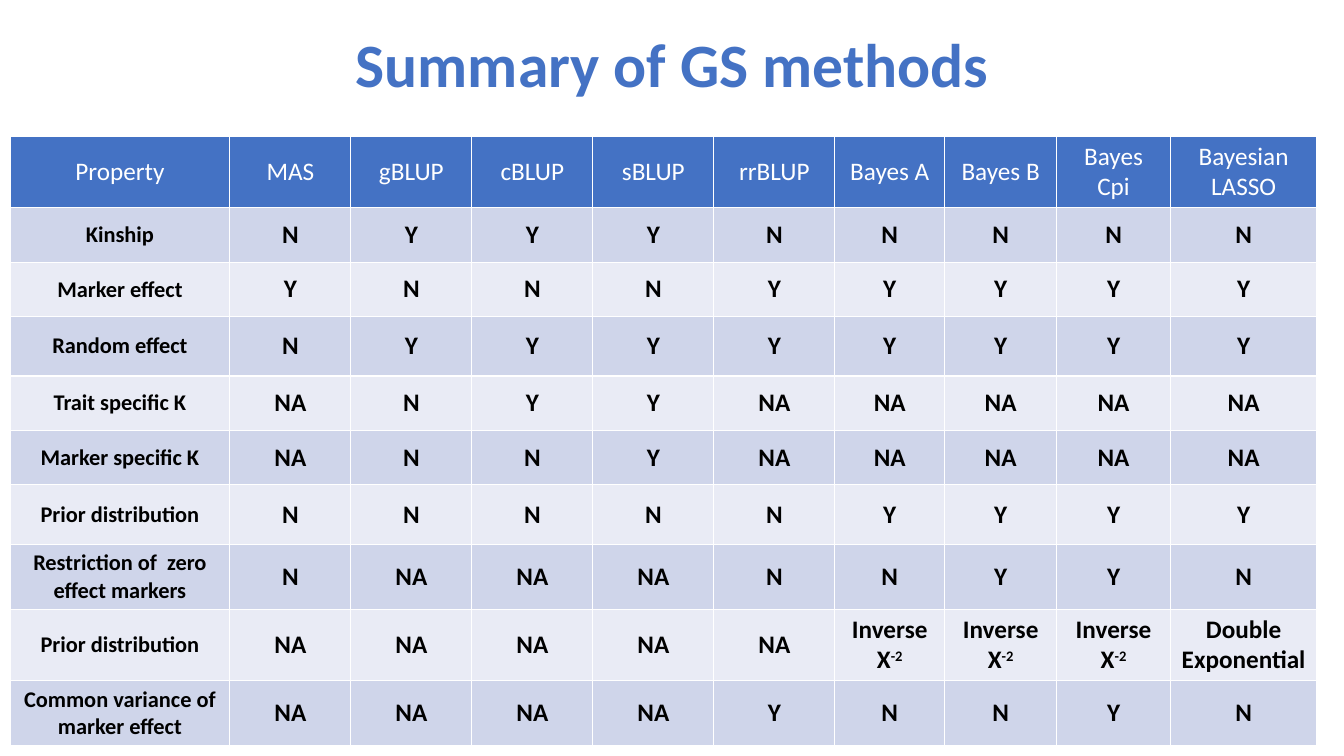
from pptx import Presentation
from pptx.dml.color import RGBColor as RGB
from pptx.enum.text import MSO_ANCHOR as Anchor, PP_ALIGN as Align
from pptx.util import Pt

PX = 9144  # 100 px to the inch
FONT = "Calibri"
HUES = {"blue": "4472C4", "white": "FFFFFF", "black": "000000",
        "dark": "CFD5EA", "light": "E9EBF5"}

WIDTHS = [218] + [120] * 5 + [109, 111, 113, 145]
HEIGHTS = [54, 54, 54, 59, 54, 54, 59, 54, 65, 54]
HEADS = ["Property", "MAS", "gBLUP", "cBLUP", "sBLUP", "rrBLUP",
         "Bayes A", "Bayes B", "Bayes Cpi", "Bayesian LASSO"]
INVERSE = "Inverse X^-2"  # the part after ^ is raised
TRAITS = [
    ("Kinship", "N Y Y Y N N N N N".split()),
    ("Marker effect", "Y N N N Y Y Y Y Y".split()),
    ("Random effect", "N Y Y Y Y Y Y Y Y".split()),
    ("Trait specific K", "NA N Y Y NA NA NA NA NA".split()),
    ("Marker specific K", "NA N N Y NA NA NA NA NA".split()),
    ("Prior distribution", "N N N N N Y Y Y Y".split()),
    ("Restriction of  zero effect markers", "N NA NA NA N N Y Y N".split()),
    ("Prior distribution",
     ["NA"] * 5 + [INVERSE] * 3 + ["Double Exponential"]),
    ("Common variance of marker effect", "NA NA NA NA Y N N Y N".split()),
]


def style(run, size, hue, bold):
    font = run.font
    font.name, font.size, font.bold = FONT, Pt(size), bold
    font.color.rgb = RGB.from_string(HUES[hue])


def add_title(slide, text, left, top, width, height):
    title = slide.shapes.title
    title.left, title.top = left * PX, top * PX
    title.width, title.height = width * PX, height * PX
    frame = title.text_frame
    frame.text = text
    frame.vertical_anchor = Anchor.MIDDLE
    para = frame.paragraphs[0]
    para.alignment = Align.CENTER
    para.line_spacing = 0.9
    style(para.runs[0], 44, "blue", True)


def fill_cell(cell, text, size, hue, bold, back):
    cell.fill.solid()
    cell.fill.fore_color.rgb = RGB.from_string(HUES[back])
    cell.vertical_anchor = Anchor.MIDDLE
    para = cell.text_frame.paragraphs[0]
    para.alignment = Align.CENTER
    base, _, power = text.partition("^")
    para.text = base
    if power:
        run = para.add_run()
        run.text = power
        run.font._element.set("baseline", "30000")
    for run in para.runs:
        style(run, size, hue, bold)


def add_grid(slide, left, top):
    """Add the table of methods; its default style draws the white borders."""
    table = slide.shapes.add_table(
        len(HEIGHTS), len(WIDTHS), left * PX, top * PX,
        sum(WIDTHS) * PX, sum(HEIGHTS) * PX).table
    for col, width in zip(table.columns, WIDTHS):
        col.width = width * PX
    for row, height in zip(table.rows, HEIGHTS):
        row.height = height * PX
    for c, head in enumerate(HEADS):
        fill_cell(table.cell(0, c), head, 18, "white", False, "blue")
    for r, (trait, marks) in enumerate(TRAITS, 1):
        back = "dark" if r % 2 else "light"
        for c, text in enumerate([trait] + marks):
            size = 18 if c else 16
            fill_cell(table.cell(r, c), text, size, "black", True, back)


def main():
    deck = Presentation()
    deck.slide_width, deck.slide_height = 1333 * PX, 750 * PX
    slide = deck.slides.add_slide(deck.slide_layouts[5])
    add_title(slide, "Summary of GS methods", 92, 0, 1150, 135)
    add_grid(slide, 10, 135)
    deck.save("out.pptx")


if __name__ == "__main__":
    main()
